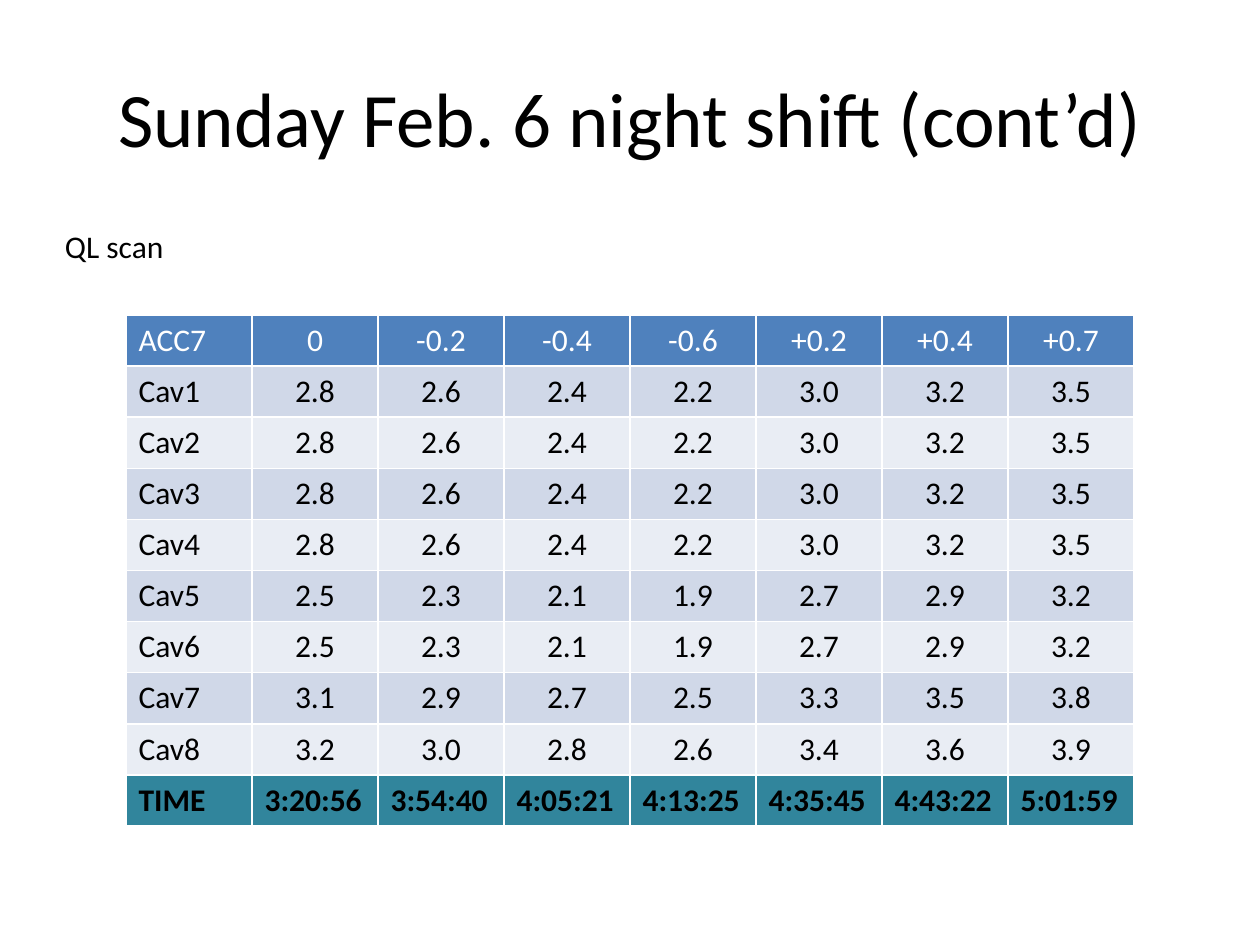
from pptx import Presentation
from pptx.dml.color import RGBColor
from pptx.enum.text import MSO_ANCHOR, MSO_AUTO_SIZE, PP_ALIGN
from pptx.util import Cm, Pt

LEFT, CENTER = PP_ALIGN.LEFT, PP_ALIGN.CENTER
MIDDLE = MSO_ANCHOR.MIDDLE
GROW = MSO_AUTO_SIZE.SHAPE_TO_FIT_TEXT

BLACK = RGBColor(0x00, 0x00, 0x00)
WHITE = RGBColor(0xFF, 0xFF, 0xFF)
HEADER_BLUE = RGBColor(0x4F, 0x81, 0xBD)
BAND_DARK = RGBColor(0xD0, 0xD8, 0xE8)
BAND_LIGHT = RGBColor(0xE9, 0xED, 0xF4)
TIME_TEAL = RGBColor(0x31, 0x85, 0x9C)

# Scan settings: starting value of each cavity, shifted by each step
STEPS = ["0", "-0.2", "-0.4", "-0.6", "+0.2", "+0.4", "+0.7"]
START_VALUES = [2.8, 2.8, 2.8, 2.8, 2.5, 2.5, 3.1, 3.2]
TIMES = ["3:20:56", "3:54:40", "4:05:21", "4:13:25", "4:35:45", "4:43:22", "5:01:59"]


def format_text(frame, size, color, align, bold=False):
    paragraph = frame.paragraphs[0]
    paragraph.alignment = align
    font = paragraph.runs[0].font
    font.name = "Calibri"
    font.size = Pt(size)
    font.bold = bold
    font.color.rgb = color


prs = Presentation()
prs.slide_width, prs.slide_height = Cm(25.4), Cm(19.05)
slide = prs.slides.add_slide(prs.slide_layouts[5])

# Title
title = slide.shapes.title
title.left, title.top, title.width, title.height = Cm(1.27), Cm(0.76), Cm(22.86), Cm(3.18)
title.text_frame.text = "Sunday Feb. 6 night shift (cont’d)"
title.text_frame.vertical_anchor = MIDDLE
format_text(title.text_frame, 44, BLACK, CENTER)

# Scan table
rows = [["ACC7"] + STEPS]
for number, start in enumerate(START_VALUES, 1):
    rows.append([f"Cav{number}"] + [f"{start + float(step):.1f}" for step in STEPS])
rows.append(["TIME"] + TIMES)

scan_table = slide.shapes.add_table(
    len(rows), len(rows[0]), Cm(2.54), Cm(6.35), Cm(20.32), Cm(10.3)).table
last = len(rows) - 1
for r, row in enumerate(rows):
    if r == 0:
        fill, color = HEADER_BLUE, WHITE
    elif r == last:
        fill, color = TIME_TEAL, BLACK
    else:
        fill, color = (BAND_DARK if r % 2 else BAND_LIGHT), BLACK
    for c, text in enumerate(row):
        cell = scan_table.cell(r, c)
        cell.fill.solid()
        cell.fill.fore_color.rgb = fill
        cell.text_frame.text = text
        align = LEFT if c == 0 or r == last else CENTER
        format_text(cell.text_frame, 18, color, align, bold=r == last)

# Scan label
scan_label = slide.shapes.add_textbox(Cm(1.06), Cm(4.45), Cm(8.05), Cm(1.03)).text_frame
scan_label.word_wrap = True
scan_label.auto_size = GROW
scan_label.text = "QL scan"
format_text(scan_label, 18, BLACK, LEFT)

prs.save("out.pptx")
